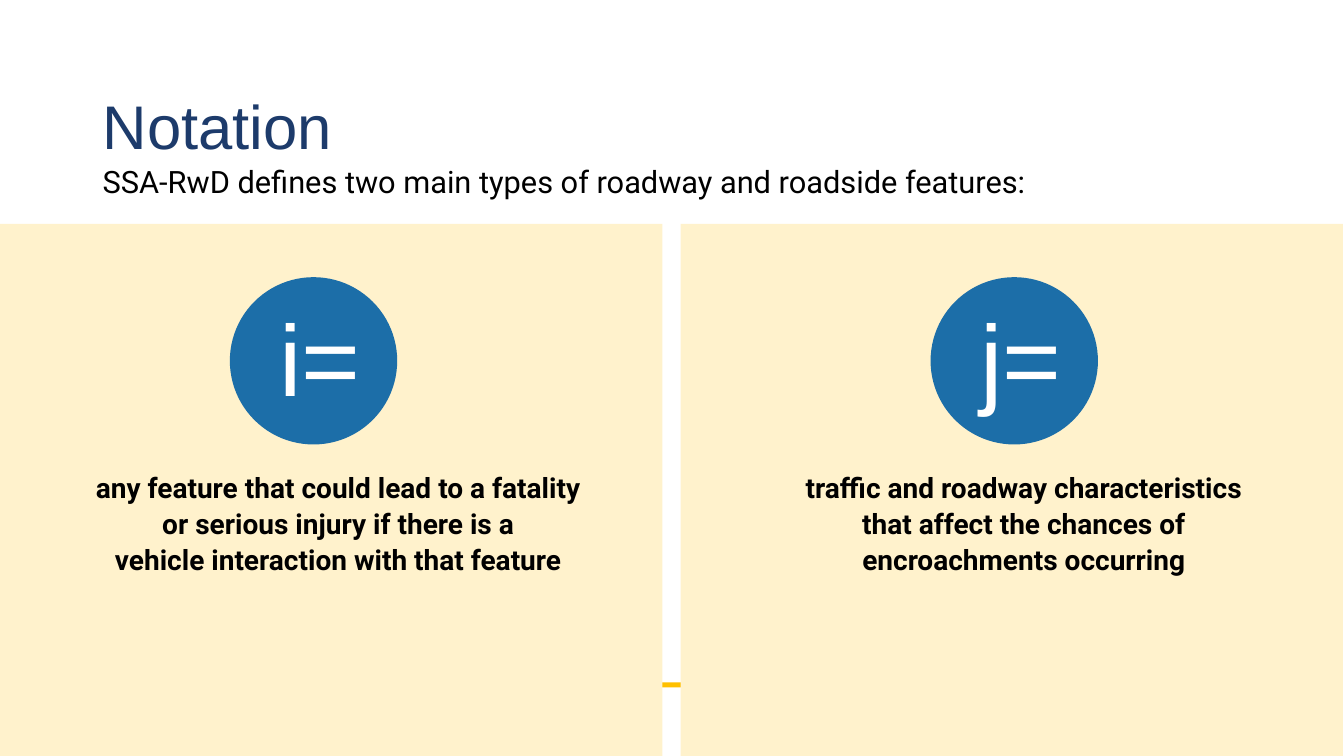
import pptx
import pptx.dml.color
import pptx.enum.shapes
import pptx.enum.text
import pptx.util

PX = 9144  # 100 px to the inch
ALIGN = pptx.enum.text.PP_ALIGN
SHAPE = pptx.enum.shapes.MSO_SHAPE


def paint(shape, color):
    """Give a shape a plain fill with no outline and no shadow."""
    shape.shadow.inherit = False
    shape.fill.solid()
    shape.fill.fore_color.rgb = pptx.dml.color.RGBColor.from_string(color)
    shape.line.fill.background()


def write(shape, lines, size, font, color, align, spacing=1.0, bold=False):
    """Write one paragraph whose lines are parted by line breaks."""
    shape.text_frame.word_wrap = True
    paragraph = shape.text_frame.paragraphs[0]
    paragraph.alignment = align
    paragraph.line_spacing = spacing
    for index, line in enumerate(lines):
        if index:
            paragraph.add_line_break()
        run = paragraph.add_run()
        run.text = line
        run.font.size = pptx.util.Pt(size)
        run.font.name = font
        run.font.bold = bold
        run.font.color.rgb = pptx.dml.color.RGBColor.from_string(color)


presentation = pptx.Presentation()
presentation.slide_width = 1333 * PX
presentation.slide_height = 750 * PX
slide = presentation.slides.add_slide(presentation.slide_layouts[5])
shapes = slide.shapes

# Gold rule, seen between the two panels
builder = shapes.build_freeform(-1, 682, scale=PX)
builder.add_line_segments([(0, 677), (1159, 677), (1154, 682)], close=True)
paint(builder.convert_to_shape(), "FFC000")

# Heading
title = shapes.title
title.left, title.top, title.width, title.height = 92 * PX, 73 * PX, 1150 * PX, 112 * PX
title.text_frame.vertical_anchor = pptx.enum.text.MSO_ANCHOR.MIDDLE
title.text_frame.auto_size = pptx.enum.text.MSO_AUTO_SIZE.NONE
write(title, ["Notation"], 44, "Arial", "1D3B6B", ALIGN.LEFT, 0.9)

intro = shapes.add_textbox(92 * PX, 154 * PX, 1260 * PX, 106 * PX)
write(intro, ["SSA-RwD defines two main types of roadway and roadside features:"],
      22, "Roboto", "000000", ALIGN.LEFT, 1.07)

# Each feature type: panel left, circle left, symbol, text left, text width, lines.
# The space that ends a line shifts its centring slightly.
features = [
    (0, 228, "i=", 62, 554, ["any feature that could lead to a fatality ",
                             "or serious injury if there is a ",
                             "vehicle interaction with that feature "]),
    (675, 923, "j=", 748, 542, ["traffic and roadway characteristics ",
                                "that affect the chances of ",
                                "encroachments occurring "]),
]
for panel_left, circle_left, symbol, text_left, text_width, lines in features:
    panel = shapes.add_shape(SHAPE.RECTANGLE, panel_left * PX, 222 * PX, 657 * PX, 528 * PX)
    paint(panel, "FFF2CC")

    circle = shapes.add_shape(SHAPE.OVAL, circle_left * PX, 275 * PX, 166 * PX, 166 * PX)
    paint(circle, "1C6EA8")

    label = shapes.add_textbox((circle_left + 6) * PX, 288 * PX, 167 * PX, 131 * PX)
    write(label, [symbol], 72, "Arial", "FFFFFF", ALIGN.CENTER)

    definition = shapes.add_textbox(text_left * PX, 460 * PX, text_width * PX, 205 * PX)
    write(definition, lines, 20, "Roboto", "000000", ALIGN.CENTER, 1.07, bold=True)

presentation.save("out.pptx")
